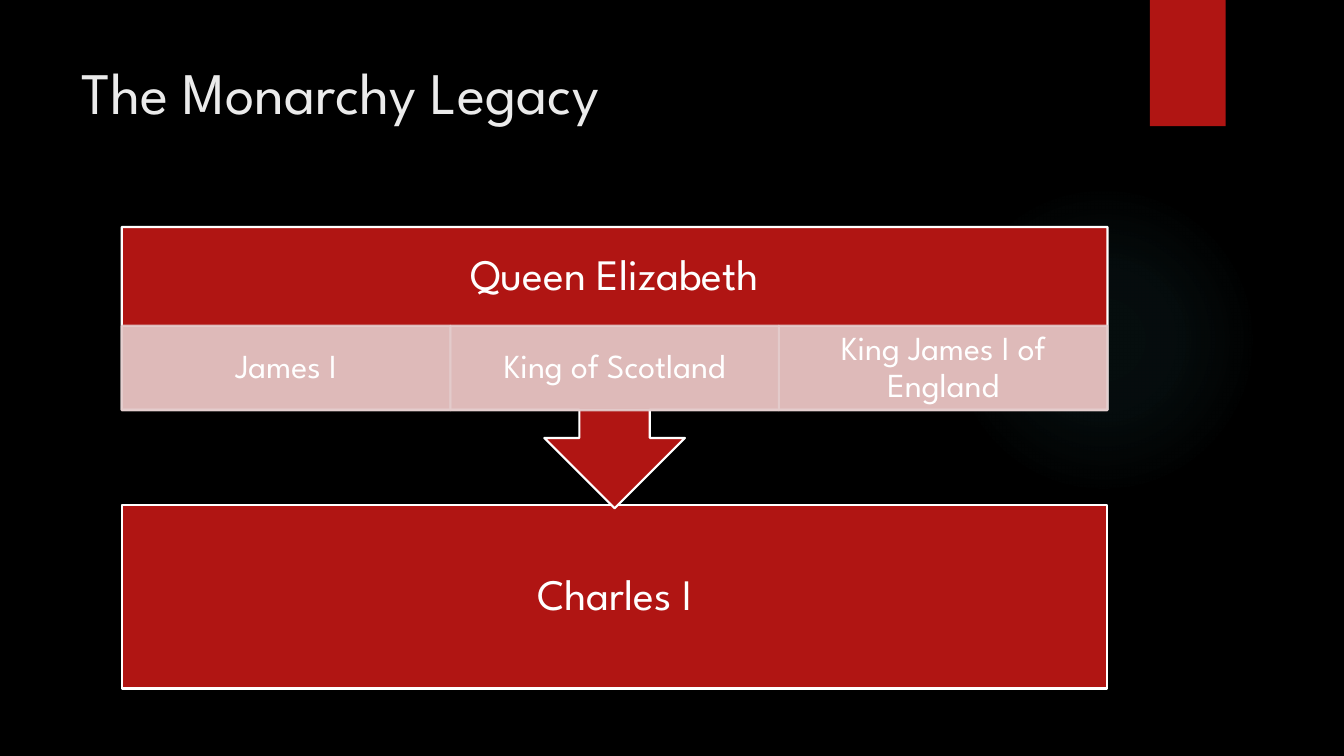
from dataclasses import dataclass

from lxml.etree import SubElement
from pptx import Presentation
from pptx.dml.color import RGBColor
from pptx.enum.shapes import MSO_SHAPE as Preset
from pptx.enum.text import MSO_ANCHOR as Anchor, PP_ALIGN as Align
from pptx.oxml import parse_xml
from pptx.oxml.ns import nsdecls, qn
from pptx.util import Cm, Pt

TITLE = "The Monarchy Legacy"
MONARCH = "Queen Elizabeth"
SUCCESSIONS = ["James I", "King of Scotland", "King James I of England"]
HEIR = "Charles I"


@dataclass(frozen=True)
class Theme:
    font: str = "League Spartan"
    background: str = "000000"
    red: str = "B01513"
    pink: str = "E4CCCC"
    white: str = "FFFFFF"
    title: str = "EBEBEB"
    glow: str = "50B9C1"
    title_size: int = 42
    name_size: int = 31
    detail_size: int = 24
    line_width: float = 1.5
    pink_opacity: int = 90


THEME = Theme()
GLOW_STOPS = [(0, 7), (36, 6), (69, 0)]  # position and opacity, in percent

# Lengths in centimetres
LEFT, WIDTH = 3.07, 24.84
CALLOUT_TOP, CALLOUT_HEIGHT = 5.72, 7.09
HEADER_HEIGHT, DETAIL_HEIGHT = 2.49, 2.13
HEIR_TOP, HEIR_HEIGHT = 12.73, 4.62
NAME_INSETS = (0.61, 0.61)
DETAIL_INSETS = (0.48, 0.08)


def set_opacity(fill, percent):
    color = fill._xPr.find(qn("a:solidFill"))[0]
    SubElement(color, qn("a:alpha"), val=str(percent * 1000))


def add_block(page, preset, box, fill, line=None, opacity=None):
    shape = page.shapes.add_shape(preset, *map(Cm, box))
    shape.shadow.inherit = False
    shape.fill.solid()
    shape.fill.fore_color.rgb = RGBColor.from_string(fill)
    if line is None:
        shape.line.fill.background()
    else:
        shape.line.color.rgb = RGBColor.from_string(line)
        shape.line.width = Pt(THEME.line_width)
    if opacity is not None:
        set_opacity(shape.fill, opacity)
        set_opacity(shape.line.fill, opacity)
    return shape


def write(shape, text, size, color, insets, align=Align.CENTER,
          anchor=Anchor.MIDDLE, spacing=0.9):
    frame = shape.text_frame
    frame.text = text
    frame.word_wrap = True
    frame.vertical_anchor = anchor
    frame.margin_left = frame.margin_right = Cm(insets[0])
    frame.margin_top = frame.margin_bottom = Cm(insets[1])
    para = frame.paragraphs[0]
    para.alignment = align
    para.line_spacing = spacing
    font = para.runs[0].font
    font.name = THEME.font
    font.size = Pt(size)
    font.color.rgb = RGBColor.from_string(color)


def add_glow(page, box):
    """Add a circle that fades out from its centre."""
    glow = add_block(page, Preset.OVAL, box, THEME.glow)
    stops = "".join(
        f'<a:gs pos="{position * 1000}"><a:srgbClr val="{THEME.glow}">'
        f'<a:alpha val="{opacity * 1000}"/></a:srgbClr></a:gs>'
        for position, opacity in GLOW_STOPS)
    gradient = parse_xml(
        f'<a:gradFill {nsdecls("a")}><a:gsLst>{stops}</a:gsLst>'
        '<a:path path="circle"><a:fillToRect l="50000" t="50000" '
        'r="50000" b="50000"/></a:path></a:gradFill>')
    properties = glow._element.spPr
    properties.replace(properties.find(qn("a:solidFill")), gradient)


def add_backdrop(page):
    page.background.fill.solid()
    page.background.fill.fore_color.rgb = RGBColor.from_string(THEME.background)
    add_glow(page, (23.9, 4.65, 7.82, 7.82))
    add_block(page, Preset.RECTANGLE, (28.98, 0, 1.91, 3.18), THEME.red)


def add_succession(page):
    heir = add_block(page, Preset.RECTANGLE, (LEFT, HEIR_TOP, WIDTH, HEIR_HEIGHT),
                     THEME.red, THEME.white)
    write(heir, HEIR, THEME.name_size, THEME.white, NAME_INSETS)

    add_block(page, Preset.DOWN_ARROW_CALLOUT,
              (LEFT, CALLOUT_TOP, WIDTH, CALLOUT_HEIGHT), THEME.red, THEME.white)
    header = page.shapes.add_textbox(
        *map(Cm, (LEFT, CALLOUT_TOP, WIDTH, HEADER_HEIGHT)))
    write(header, MONARCH, THEME.name_size, THEME.white, NAME_INSETS)

    cell_width = WIDTH / len(SUCCESSIONS)
    for index, detail in enumerate(SUCCESSIONS):
        box = (LEFT + index * cell_width, CALLOUT_TOP + HEADER_HEIGHT,
               cell_width, DETAIL_HEIGHT)
        cell = add_block(page, Preset.RECTANGLE, box, THEME.pink, THEME.pink,
                         THEME.pink_opacity)
        write(cell, detail, THEME.detail_size, THEME.white, DETAIL_INSETS)


def main():
    deck = Presentation()
    deck.slide_width, deck.slide_height = Cm(33.87), Cm(19.05)
    page = deck.slides.add_slide(deck.slide_layouts[6])
    add_backdrop(page)
    title = page.shapes.add_textbox(*map(Cm, (1.8, 1.27, 26.14, 3.89)))
    write(title, TITLE, THEME.title_size, THEME.title, (0.25, 0.13),
          Align.LEFT, Anchor.TOP, 1.0)
    add_succession(page)
    deck.save("out.pptx")


if __name__ == "__main__":
    main()
